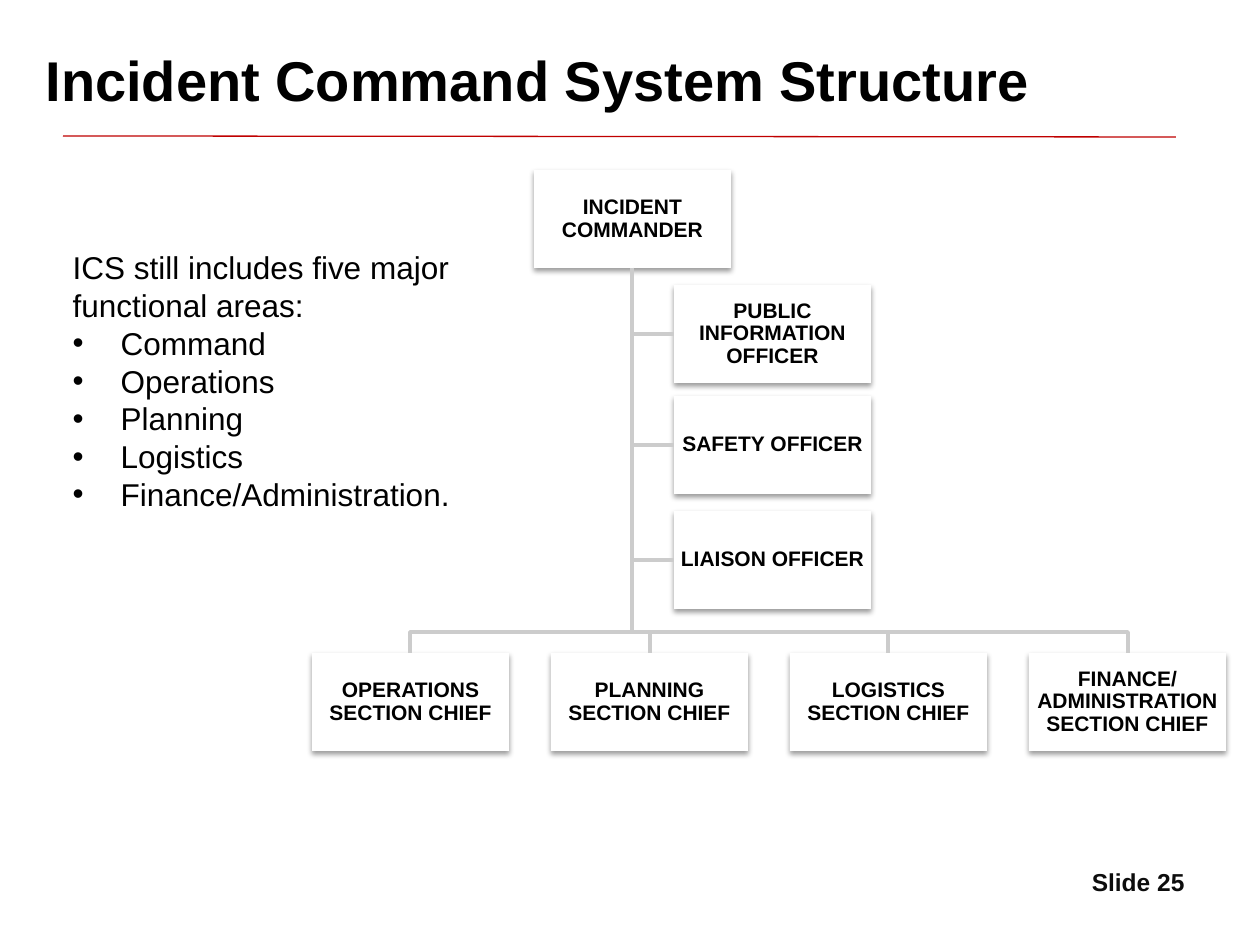
from lxml.etree import SubElement
from pptx import Presentation
from pptx.dml.color import RGBColor
from pptx.enum.shapes import MSO_CONNECTOR, MSO_SHAPE
from pptx.enum.text import MSO_ANCHOR, PP_ALIGN
from pptx.oxml.ns import qn
from pptx.util import Pt

PX = 914400 / 126
COLORS = {"text": "000000", "number": "0D0D0D", "rule": "C00000",
          "box": "FFFFFF", "link": "CCCCCC", "shadow": "000000"}
BOX_W, BOX_H = 197, 98


def px(*values):
    return [round(v * PX) for v in values]


def rgb(name):
    return RGBColor.from_string(COLORS[name])


def place(shape, box):
    shape.left, shape.top, shape.width, shape.height = px(*box)


def style(p, size, bold=False, color="text", align=PP_ALIGN.LEFT):
    p.alignment = align
    for r in p.runs:
        r.font.name, r.font.size, r.font.bold = "Arial", Pt(size), bold
        r.font.color.rgb = rgb(color)


def add_header(s, box):
    x, y, w, h = box
    # Rule under the title
    line = s.shapes.add_connector(MSO_CONNECTOR.STRAIGHT,
                                  *px(x + 30, y + 101, x + 1143, y + 102))
    line.line.color.rgb, line.line.width = rgb("rule"), Pt(0.75)
    SubElement(line._element.spPr, qn("a:effectLst"))
    # Title
    title = s.shapes.title
    place(title, box)
    tf = title.text_frame
    tf.text = "Incident Command System Structure"
    tf.vertical_anchor = MSO_ANCHOR.MIDDLE
    style(tf.paragraphs[0], 32, bold=True)


def add_areas(s, box, intro, areas):
    body = s.placeholders[1]
    place(body, box)
    tf = body.text_frame
    tf.text = "\n".join([intro, *areas])
    for i, p in enumerate(tf.paragraphs):
        pPr = p._p.get_or_add_pPr()
        indent = round(48 * PX) if i else 0
        pPr.set("marL", str(indent))
        pPr.set("indent", str(-indent))
        if i:
            SubElement(pPr, qn("a:buFont"), typeface="Arial")
            SubElement(pPr, qn("a:buChar"), char="•")
        else:
            SubElement(pPr, qn("a:buNone"))
        p.space_before = Pt(0)
        style(p, 18)


def add_shadow(shape):
    shape.shadow.inherit = False
    effects = shape._element.spPr.find(qn("a:effectLst"))
    outer = SubElement(effects, qn("a:outerShdw"), blurRad=str(Pt(3.1)),
                       dist=str(Pt(1.6)), dir="5400000", rotWithShape="0")
    color = SubElement(outer, qn("a:srgbClr"), val=COLORS["shadow"])
    SubElement(color, qn("a:alpha"), val="38000")


def add_role(s, x, y, text):
    sp = s.shapes.add_shape(MSO_SHAPE.RECTANGLE, *px(x, y, BOX_W, BOX_H))
    sp.fill.solid()
    sp.fill.fore_color.rgb = rgb("box")
    sp.line.fill.background()
    add_shadow(sp)
    tf = sp.text_frame
    tf.word_wrap = True
    tf.vertical_anchor = MSO_ANCHOR.MIDDLE
    tf.margin_left = tf.margin_right = tf.margin_top = tf.margin_bottom = px(1)[0]
    tf.text = text
    tf.paragraphs[0].line_spacing = 0.9
    style(tf.paragraphs[0], 12, bold=True, align=PP_ALIGN.CENTER)


def add_link(s, start, *points):
    builder = s.shapes.build_freeform(*start, scale=PX)
    builder.add_line_segments(points, close=False)
    sp = builder.convert_to_shape()
    sp.fill.background()
    sp.line.color.rgb, sp.line.width = rgb("link"), Pt(2)
    sp.shadow.inherit = False


def add_org_chart(s, box, commander, officers, chiefs):
    x, y, w, h = box
    top_x, officer_x = x + 222, x + 362
    chief_y = y + h - BOX_H
    step = (w - BOX_W) / (len(chiefs) - 1)
    chief_spots = [(x + i * step, text) for i, text in enumerate(chiefs)]
    # Roles
    add_role(s, top_x, y, commander)
    for dy, text in officers:
        add_role(s, officer_x, y + dy, text)
    for cx, text in chief_spots:
        add_role(s, cx, chief_y, text)
    # Links from the commander
    trunk, bus_y = top_x + BOX_W / 2, chief_y - 21
    start = (trunk, y + BOX_H)
    for dy, _ in officers:
        mid = y + dy + BOX_H / 2
        add_link(s, start, (trunk, mid), (officer_x, mid))
    for cx, _ in chief_spots:
        mid = cx + BOX_W / 2
        add_link(s, start, (trunk, bus_y), (mid, bus_y), (mid, chief_y))


def add_number(s, box, text):
    tf = s.shapes.add_textbox(*px(*box)).text_frame
    tf.word_wrap = True
    tf.text = text
    style(tf.paragraphs[0], 14, bold=True, color="number", align=PP_ALIGN.RIGHT)


def main():
    prs = Presentation()
    prs.slide_width, prs.slide_height = px(1260, 945)
    s = prs.slides.add_slide(prs.slide_layouts[1])
    add_header(s, (33, 35, 1169, 88))
    add_areas(s, (60, 242, 493, 280),
              "ICS still includes five major functional areas:",
              ["Command", "Operations", "Planning", "Logistics",
               "Finance/Administration."])
    add_org_chart(s, (312, 170, 914, 581), "INCIDENT COMMANDER",
                  [(115, "PUBLIC INFORMATION OFFICER"),
                   (226, "SAFETY OFFICER"), (341, "LIAISON OFFICER")],
                  ["OPERATIONS SECTION CHIEF", "PLANNING SECTION CHIEF",
                   "LOGISTICS SECTION CHIEF",
                   "FINANCE/ ADMINISTRATION SECTION CHIEF"])
    add_number(s, (903, 861, 294, 66), "Slide 25")
    prs.save("out.pptx")


if __name__ == "__main__":
    main()
